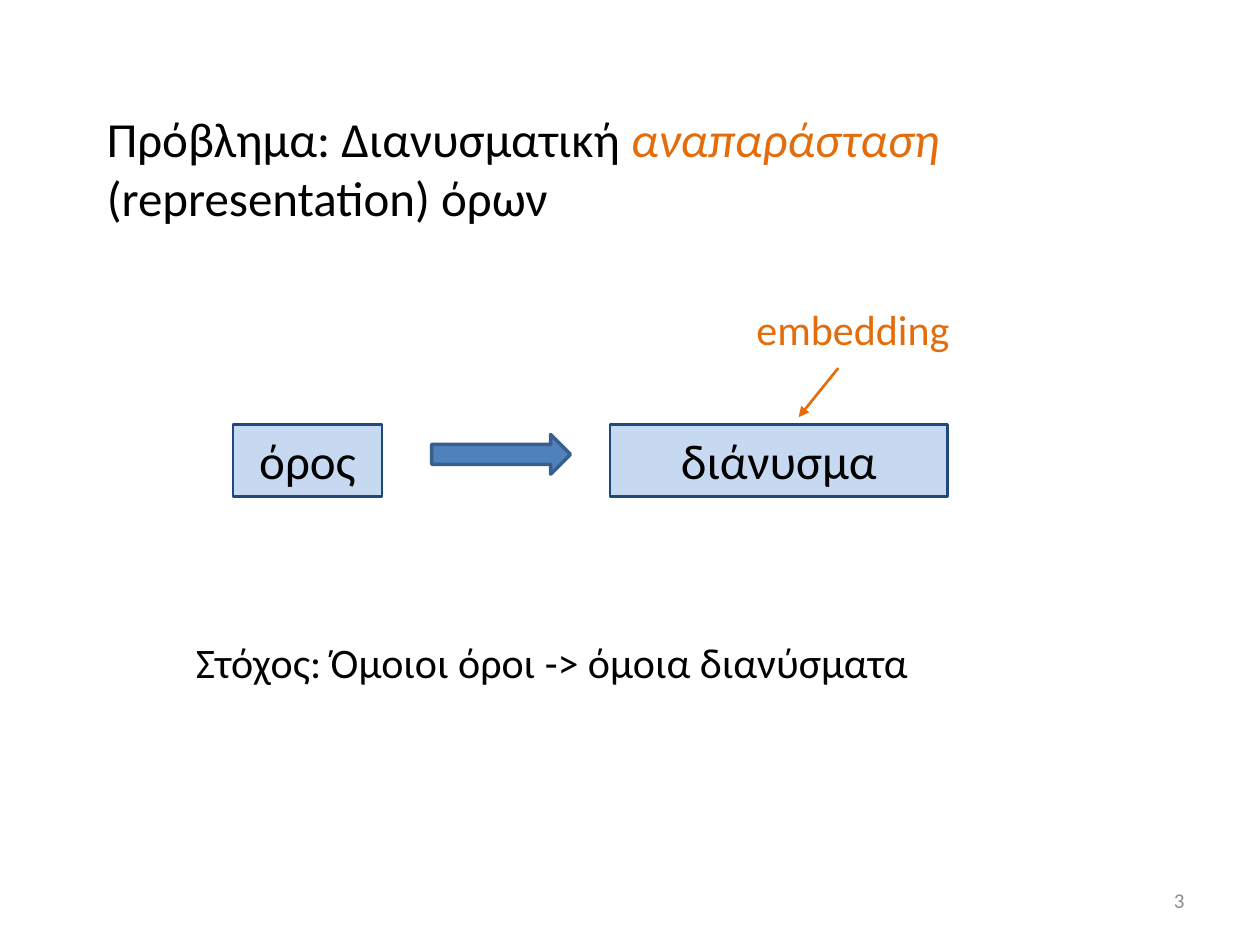
from dataclasses import dataclass

from lxml.etree import SubElement
from pptx import Presentation
from pptx.dml.color import RGBColor
from pptx.enum.shapes import MSO_CONNECTOR as Connector, MSO_SHAPE as Shape
from pptx.enum.text import MSO_ANCHOR as Anchor, MSO_AUTO_SIZE as AutoSize, PP_ALIGN as Align
from pptx.oxml.ns import qn
from pptx.util import Cm, Pt


@dataclass(frozen=True)
class Theme:
    font: str = "Calibri"
    text: str = "000000"
    accent: str = "E46C0A"
    box_fill: str = "C6D9F1"
    box_line: str = "1F497D"
    arrow_fill: str = "4F81BD"
    arrow_line: str = "3A5F8C"
    muted: str = "8C8C8C"
    large: int = 28
    medium: int = 24
    small: int = 12


THEME = Theme()


def rgb(value):
    return RGBColor.from_string(value)


def place(shape, box):
    shape.left, shape.top, shape.width, shape.height = (Cm(length) for length in box)


def style_paragraph(paragraph, size, color=THEME.text, align=Align.LEFT):
    paragraph.alignment = align
    font = paragraph.font
    font.name, font.size = THEME.font, Pt(size)
    font.color.rgb = rgb(color)


def add_text(slide, box, text, size, color=THEME.text, align=Align.LEFT, anchor=Anchor.TOP):
    frame = slide.shapes.add_textbox(*(Cm(length) for length in box)).text_frame
    frame.word_wrap = True
    frame.vertical_anchor = anchor
    frame.text = text
    style_paragraph(frame.paragraphs[0], size, color, align)


def add_filled_shape(slide, kind, box, fill, line, line_width):
    shape = slide.shapes.add_shape(kind, *(Cm(length) for length in box))
    shape.shadow.inherit = False
    shape.fill.solid()
    shape.fill.fore_color.rgb = rgb(fill)
    shape.line.color.rgb = rgb(line)
    shape.line.width = Pt(line_width)
    return shape


def add_term_box(slide, box, text):
    shape = add_filled_shape(slide, Shape.RECTANGLE, box, THEME.box_fill, THEME.box_line, 1.5)
    frame = shape.text_frame
    frame.vertical_anchor = Anchor.TOP
    frame.text = text
    style_paragraph(frame.paragraphs[0], THEME.large, align=Align.CENTER)


def add_pointer(slide, start, end):
    """Draw a thin accent line with an arrowhead at its end."""
    ends = (Cm(length) for length in (*start, *end))
    connector = slide.shapes.add_connector(Connector.STRAIGHT, *ends)
    connector.line.color.rgb = rgb(THEME.accent)
    connector.line.width = Pt(1.5)
    SubElement(connector.line._get_or_add_ln(), qn("a:tailEnd"), type="triangle")
    SubElement(connector._element.spPr, qn("a:effectLst"))


def fill_title(slide, box):
    title = slide.shapes.title
    place(title, box)
    frame = title.text_frame
    frame.auto_size = AutoSize.NONE
    frame.vertical_anchor = Anchor.TOP
    paragraph = frame.paragraphs[0]
    style_paragraph(paragraph, THEME.large)
    for text, emphasised in (
        ("Πρόβλημα: Διανυσματική ", False),
        ("αναπαράσταση ", True),
        ("(representation) όρων", False),
    ):
        run = paragraph.add_run()
        run.text = text
        if emphasised:
            run.font.italic = True
            run.font.color.rgb = rgb(THEME.accent)


def add_mapping(slide, box):
    """Draw the term, the arrow and the vector with its embedding label."""
    left, top, width, height = box
    box_height = 1.45
    box_top = top + height - box_height
    vector_width = 6.8
    vector_left = left + width - vector_width
    add_term_box(slide, (left, box_top, 3, box_height), "όρος")
    add_term_box(slide, (vector_left, box_top, vector_width, box_height), "διάνυσμα")
    add_filled_shape(slide, Shape.RIGHT_ARROW, (left + 4, box_top + 0.2, 2.8, 0.8),
                     THEME.arrow_fill, THEME.arrow_line, 2)
    add_text(slide, (vector_left + 2.7, top, 7.2, 1.27), "embedding",
             THEME.medium, THEME.accent)
    add_pointer(slide, (vector_left + 4.6, top + 1.42), (vector_left + 3.8, box_top - 0.15))


def main():
    presentation = Presentation()
    presentation.slide_width, presentation.slide_height = Cm(25.4), Cm(19.05)
    title_only = presentation.slide_layouts[5]
    slide = presentation.slides.add_slide(title_only)
    fill_title(slide, (1.9, 2.06, 22.4, 2.65))
    add_mapping(slide, (4.7, 6, 14.4, 4.01))
    add_text(slide, (3.7, 12.7, 15.8, 1.27),
             "Στόχος: Όμοιοι όροι -> όμοια διανύσματα", THEME.medium)
    add_text(slide, (18.2, 17.65, 5.93, 1.01), "3", THEME.small,
             THEME.muted, Align.RIGHT, Anchor.MIDDLE)
    presentation.save("out.pptx")


if __name__ == "__main__":
    main()
